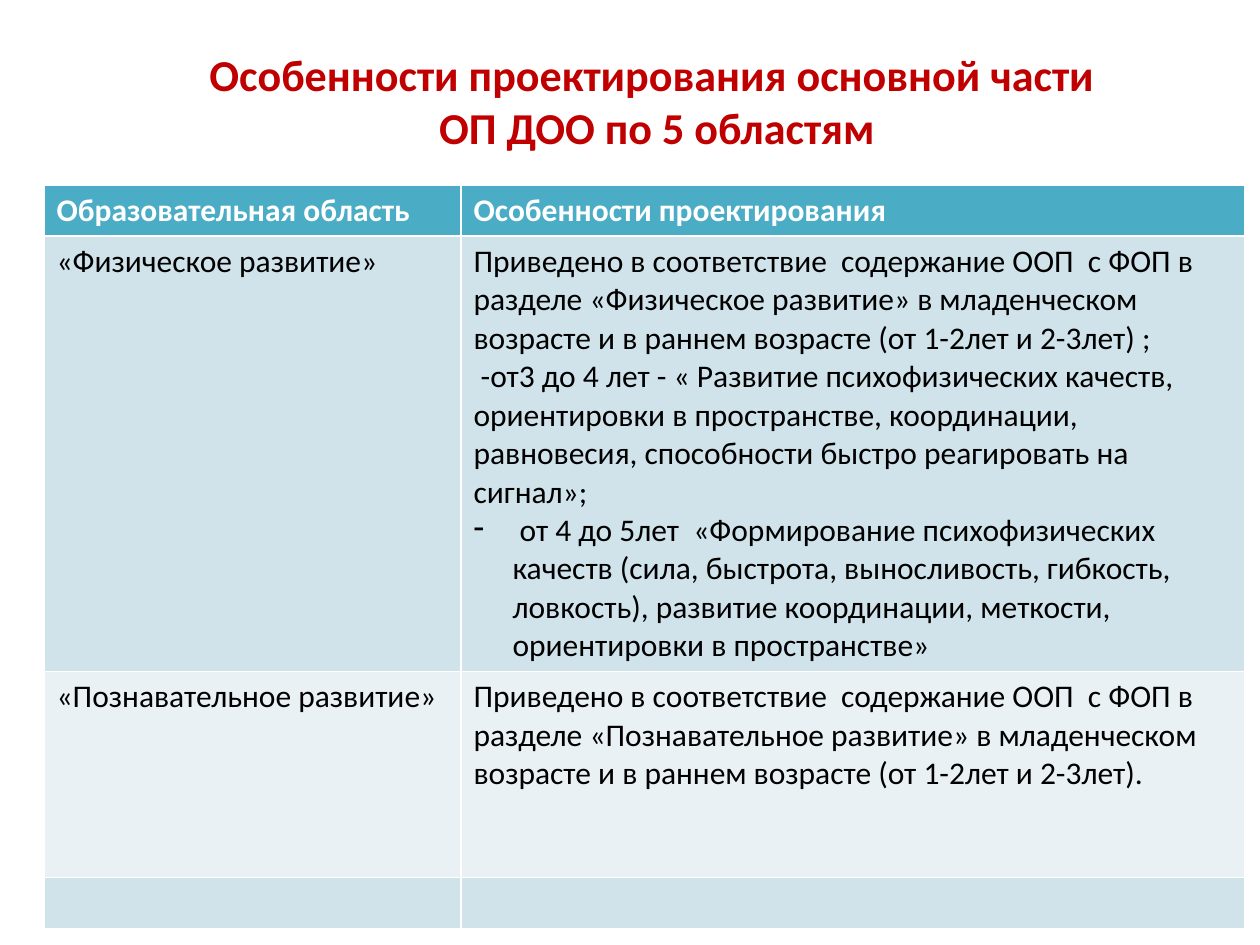
from lxml.etree import SubElement
from pptx import Presentation
from pptx.dml.color import RGBColor
from pptx.enum.text import MSO_ANCHOR, MSO_AUTO_SIZE, PP_ALIGN
from pptx.oxml.ns import qn
from pptx.util import Pt

PX = 914400 // 126
COLORS = {"title": "C00000", "header": "4BACC6", "odd": "D0E3EA",
          "even": "E9F1F5", "white": "FFFFFF", "black": "000000"}
FONT = "Calibri"
DASH = "- "  # marks a paragraph that becomes a dash list item

HEADINGS = ["Образовательная область", "Особенности проектирования"]
AREAS = [
    ("«Физическое развитие»", [
        "Приведено в соответствие  содержание ООП  с ФОП в разделе "
        "«Физическое развитие» в младенческом возрасте и в раннем возрасте "
        "(от 1-2лет и 2-3лет) ;",
        " -от3 до 4 лет - « Развитие психофизических качеств, ориентировки в "
        "пространстве, координации, равновесия, способности быстро "
        "реагировать на сигнал»;",
        DASH + " от 4 до 5лет  «Формирование психофизических качеств (сила, "
        "быстрота, выносливость, гибкость, ловкость), развитие координации, "
        "меткости, ориентировки в пространстве»",
    ]),
    ("«Познавательное развитие»", [
        "Приведено в соответствие  содержание ООП  с ФОП в разделе "
        "«Познавательное развитие» в младенческом возрасте и в раннем "
        "возрасте (от 1-2лет и 2-3лет).",
    ]),
    ("", [""]),
]


class Deck:
    def __init__(self, width, height):
        self.prs = Presentation()
        self.prs.slide_width, self.prs.slide_height = width * PX, height * PX
        self.slide = self.prs.slides.add_slide(self.prs.slide_layouts[5])

    def style(self, paragraph, size, color, bold):
        font = paragraph.font
        font.name, font.size, font.bold = FONT, Pt(size), bold
        font.color.rgb = RGBColor.from_string(COLORS[color])

    def title(self, text, left, top, width, height):
        heading = self.slide.shapes.title
        heading.left, heading.top = left * PX, top * PX
        heading.width, heading.height = width * PX, height * PX
        frame = heading.text_frame
        frame.text = text
        frame.auto_size = MSO_AUTO_SIZE.NONE
        frame.vertical_anchor = MSO_ANCHOR.MIDDLE
        frame.paragraphs[0].alignment = PP_ALIGN.CENTER
        self.style(frame.paragraphs[0], 25.2, "title", True)

    def dash(self, paragraph, indent):
        """Turn the paragraph into a list item with a hanging dash."""
        props = paragraph._p.get_or_add_pPr()
        props.set("marL", str(indent * PX))
        props.set("indent", str(-indent * PX))
        bullet = SubElement(props, qn("a:buChar"))
        bullet.set("char", DASH.strip())
        props.insert(0, bullet)

    def cell(self, cell, lines, fill, color, bold=False):
        cell.fill.solid()
        cell.fill.fore_color.rgb = RGBColor.from_string(COLORS[fill])
        cell.text = "\n".join(line.removeprefix(DASH) for line in lines)
        for line, paragraph in zip(lines, cell.text_frame.paragraphs):
            self.style(paragraph, 18, color, bold)
            if line.startswith(DASH):
                self.dash(paragraph, 39)

    def table(self, left, top, columns, rows):
        table = self.slide.shapes.add_table(
            len(rows), len(columns), left * PX, top * PX,
            sum(columns) * PX, sum(rows) * PX).table
        for column, width in zip(table.columns, columns):
            column.width = width * PX
        for row, height in zip(table.rows, rows):
            row.height = height * PX
        return table


def main():
    deck = Deck(1260, 945)
    deck.title("Особенности проектирования основной части\v ОП ДОО по 5 областям",
               44, 45, 1216, 110)
    areas = deck.table(44, 185, [417, 784], [51, 435, 206, 50])
    for col, heading in enumerate(HEADINGS):
        deck.cell(areas.cell(0, col), [heading], "header", "white", True)
    for row, (area, features) in enumerate(AREAS, 1):
        fill = "odd" if row % 2 else "even"
        deck.cell(areas.cell(row, 0), [area], fill, "black")
        deck.cell(areas.cell(row, 1), features, fill, "black")
    deck.prs.save("out.pptx")


if __name__ == "__main__":
    main()
